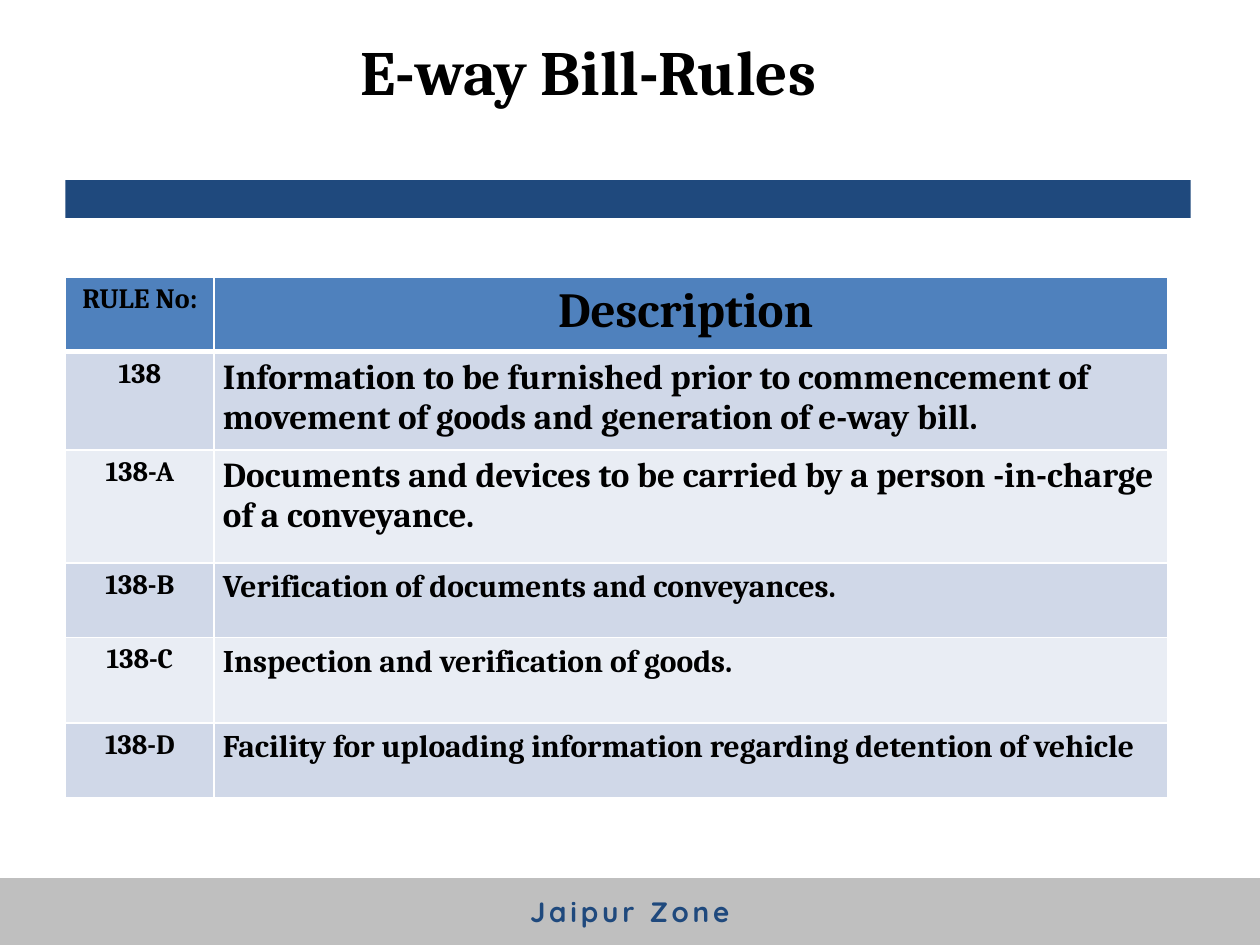
from lxml.etree import SubElement
from pptx import Presentation
from pptx.dml.color import RGBColor
from pptx.enum.shapes import MSO_SHAPE
from pptx.enum.text import MSO_ANCHOR, PP_ALIGN
from pptx.oxml.ns import qn
from pptx.util import Inches, Pt

TITLE = "E-way Bill-Rules"
FOOTER = "Jaipur Zone"
# rule number, description, description size, row height
ROWS = [
    ("RULE No:", "Description ", 28, 0.59),
    ("138", "Information to be furnished prior to commencement of movement "
            "of goods and generation of e-way bill.", 20, 0.78),
    ("138-A", "Documents and devices to be carried by a person -in-charge "
              "of a conveyance.", 20, 0.9),
    ("138-B", "Verification of documents and conveyances.", 18, 0.59),
    ("138-C", "Inspection and verification of goods.", 18, 0.68),
    ("138-D", "Facility for uploading information regarding detention of vehicle", 18, 0.59),
]
COL_WIDTHS = [1.18, 7.57]
COLORS = {"white": "FFFFFF", "text": "000000", "navy": "1F497D", "header": "4F81BD",
          "odd": "D0D8E8", "even": "E9EDF4", "footer": "BFBFBF"}


def rgb(name):
    return RGBColor.from_string(COLORS[name])


def style(p, size, color="text", font="Cambria", align=PP_ALIGN.CENTER):
    p.alignment = align
    p.font.size, p.font.name, p.font.bold = Pt(size), font, True
    p.font.color.rgb = rgb(color)


def add_band(s, left, top, width, height, color):
    sp = s.shapes.add_shape(MSO_SHAPE.RECTANGLE, Inches(left), Inches(top),
                            Inches(width), Inches(height))
    sp.shadow.inherit = False
    sp.fill.solid()
    sp.fill.fore_color.rgb = rgb(color)
    sp.line.fill.background()
    return sp


def set_borders(cell, **widths):
    tc_pr = cell._tc.get_or_add_tcPr()
    for side in "LRTB":
        ln = SubElement(tc_pr, qn("a:ln" + side), w=str(Pt(widths.get(side, 1))))
        fill = SubElement(ln, qn("a:solidFill"))
        SubElement(fill, qn("a:srgbClr"), val=COLORS["white"])


prs = Presentation()
prs.slide_width, prs.slide_height = Inches(10), Inches(7.5)
s = prs.slides.add_slide(prs.slide_layouts[5])

# Title
title = s.shapes.title
title.left, title.top = Inches(2.25), Inches(0.22)
title.width, title.height = Inches(4.84), Inches(0.96)
title.fill.solid()
title.fill.fore_color.rgb = rgb("white")
title.line.color.rgb = rgb("white")
title.line.width = Pt(0.75)
tf = title.text_frame
tf.text = TITLE
tf.vertical_anchor = MSO_ANCHOR.MIDDLE
p = tf.paragraphs[0]
style(p, 36)
p.line_spacing = Pt(22.5)

# Bar under the title
add_band(s, 0.52, 1.43, 8.93, 0.3, "navy")

# Rules table
table = s.shapes.add_table(len(ROWS), 2, Inches(0.52), Inches(2.2), Inches(sum(COL_WIDTHS)),
                           Inches(sum(row[3] for row in ROWS))).table
for col, width in zip(table.columns, COL_WIDTHS):
    col.width = Inches(width)
for i, (number, description, size, height) in enumerate(ROWS):
    table.rows[i].height = Inches(height)
    color = "header" if i == 0 else "odd" if i % 2 else "even"
    widths = {0: {"B": 3}, 1: {"T": 3}}.get(i, {})
    for j, (text, pt) in enumerate([(number, 16), (description, size)]):
        cell = table.cell(i, j)
        cell.text = text
        cell.margin_left = cell.margin_right = Inches(0.07)
        set_borders(cell, **widths)
        cell.fill.solid()
        cell.fill.fore_color.rgb = rgb(color)
        align = PP_ALIGN.LEFT if i and j else PP_ALIGN.CENTER
        style(cell.text_frame.paragraphs[0], pt, align=align)

# Footer
tf = add_band(s, 0, 6.97, 10, 0.53, "footer").text_frame
tf.vertical_anchor = MSO_ANCHOR.MIDDLE
p = tf.paragraphs[0]
r = p.add_run()
r.text = FOOTER
style(p, 16, "navy", "Quicksand")
r.font._element.set("spc", "220")

prs.save("out.pptx")
